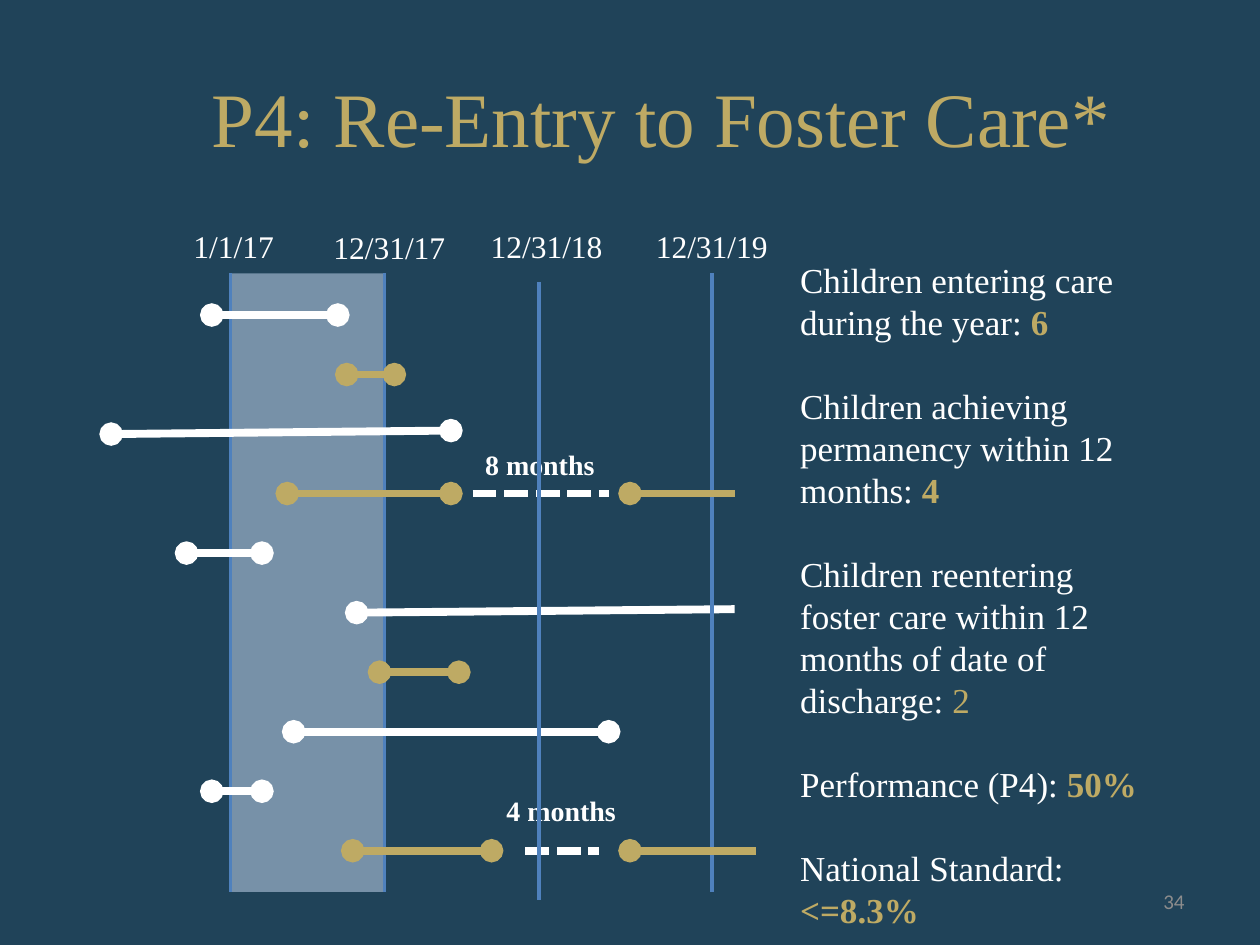
from dataclasses import dataclass

from pptx import Presentation
from pptx.dml.color import RGBColor
from pptx.enum.dml import MSO_LINE
from pptx.enum.shapes import MSO_CONNECTOR, MSO_SHAPE
from pptx.enum.text import MSO_ANCHOR, MSO_AUTO_SIZE, PP_ALIGN
from pptx.oxml.ns import qn
from pptx.util import Cm, Pt
from lxml.etree import SubElement


@dataclass(frozen=True)
class Theme:
    back: str = "204359"
    gold: str = "BEAA64"
    white: str = "FFFFFF"
    band: str = "B9CDE5"
    axis: str = "4F81BD"
    gray: str = "8C8C8C"
    serif: str = "Times New Roman"
    sans: str = "Calibri"
    title: int = 44
    body: int = 20
    date: int = 18
    note: int = 16
    page: int = 12
    thin: float = 2
    thick: float = 4.5


@dataclass(frozen=True)
class Box:
    left: float
    top: float
    width: float
    height: float


THEME = Theme()

ROW_TOP, ROW_GAP = 1.9, 1.2
MARK_TOP, MARK_LEN = 1.06, 12.47
STAYS = [
    (2.07, 4.61, THEME.white, 0, True),
    (4.79, 5.75, THEME.gold, 0, True),
    (0.04, 6.89, THEME.white, 0.07, True),
    (3.59, 6.89, THEME.gold, 0, True),
    (1.56, 3.08, THEME.white, 0, True),
    (4.99, 12.61, THEME.white, 0.07, False),
    (5.45, 7.05, THEME.gold, 0, True),
    (3.72, 10.07, THEME.white, 0, True),
    (2.07, 3.08, THEME.white, 0, True),
    (4.91, 7.71, THEME.gold, 0, True),
]
RETURNS = [
    (3, 10.5, 12.61, 7.33, 10.07, "8 months", 7.33, 1.06),
    (9, 10.5, 13.04, 8.39, 9.87, "4 months", 7.76, 1.27),
]
FACTS = [
    ("Children entering care during the year: ", "6", True),
    ("Children achieving permanency within 12 months: ", "4", True),
    ("Children reentering foster care within 12 months of date of discharge: ", "2", False),
    ("Performance (P4): ", "50%", True),
    ("National Standard: ", "<=8.3%", True),
]


def style(font, size, color, face=THEME.serif, bold=False):
    font.size, font.name, font.bold = Pt(size), face, bold
    font.color.rgb = RGBColor.from_string(color)


def add_text(slide, box, text, size, color, align=PP_ALIGN.LEFT, wrap=True,
             face=THEME.serif, bold=False):
    shape = slide.shapes.add_textbox(Cm(box.left), Cm(box.top), Cm(box.width), Cm(box.height))
    frame = shape.text_frame
    frame.word_wrap = wrap
    frame.text = text
    line = frame.paragraphs[0]
    line.alignment = align
    style(line.font, size, color, face, bold)
    return frame


def add_line(slide, start, end, color, width, head=False, tail=False, dash=None):
    link = slide.shapes.add_connector(
        MSO_CONNECTOR.STRAIGHT, Cm(start[0]), Cm(start[1]), Cm(end[0]), Cm(end[1]))
    link.line.color.rgb = RGBColor.from_string(color)
    link.line.width = Pt(width)
    if dash:
        link.line.dash_style = dash
    props = link.element.spPr
    pen = props.find(qn("a:ln"))
    for tag, shown in (("a:headEnd", head), ("a:tailEnd", tail)):
        if shown:
            SubElement(pen, qn(tag), type="oval")
    SubElement(props, qn("a:effectLst"))


def add_mark(slide, box, date, pos, mid, drop=0, shift=0):
    x, top = box.left + pos, box.top + MARK_TOP + drop
    add_line(slide, (x, top), (x, top + MARK_LEN), THEME.axis, THEME.thin)
    label = Box(box.left + mid - 1.4, box.top + shift, 2.8, 1.02)
    add_text(slide, label, date, THEME.date, THEME.white, PP_ALIGN.CENTER, wrap=False)


def add_band(slide, box, start, end):
    band = slide.shapes.add_shape(
        MSO_SHAPE.RECTANGLE, Cm(box.left + start), Cm(box.top + MARK_TOP),
        Cm(end - start), Cm(MARK_LEN))
    band.shadow.inherit = False
    band.line.fill.background()
    band.fill.solid()
    band.fill.fore_color.rgb = RGBColor.from_string(THEME.band)
    tint = band.element.spPr.find(qn("a:solidFill"))[0]
    SubElement(tint, qn("a:alpha"), val="57000")


def add_chart(slide, box):
    add_band(slide, box, 2.45, 5.55)
    add_mark(slide, box, "1/1/17", 2.45, 2.51)
    add_mark(slide, box, "12/31/17", 5.55, 5.65, shift=0.03)
    rows = [box.top + ROW_TOP + ROW_GAP * i for i in range(len(STAYS))]
    for y, (start, end, color, rise, closed) in zip(rows, STAYS):
        add_line(slide, (box.left + start, y), (box.left + end, y - rise),
                 color, THEME.thick, head=True, tail=closed)
    add_mark(slide, box, "12/31/19", 12.15, 12.15)
    for row, start, end, gap, stop, text, left, lift in RETURNS:
        y = rows[row]
        add_line(slide, (box.left + start, y), (box.left + end, y),
                 THEME.gold, THEME.thick, head=True)
        add_line(slide, (box.left + gap, y), (box.left + stop, y),
                 THEME.white, THEME.thick, dash=MSO_LINE.SQUARE_DOT)
        add_text(slide, Box(box.left + left, y - lift, 2.74, 0.94), text,
                 THEME.note, THEME.white, bold=True)
    add_mark(slide, box, "12/31/18", 8.67, 8.82, drop=0.17)


def add_facts(slide, box):
    frame = add_text(slide, box, "", THEME.body, THEME.white)
    frame.auto_size = MSO_AUTO_SIZE.SHAPE_TO_FIT_TEXT
    for i, (text, value, bold) in enumerate(FACTS):
        line = frame.add_paragraph() if i else frame.paragraphs[0]
        style(line.font, THEME.body, THEME.white)
        line.line_spacing = Pt(24)
        line.space_before = Pt(24 if i else 0)
        line.add_run().text = text
        run = line.add_run()
        run.text = value
        run.font.bold = bold
        run.font.color.rgb = RGBColor.from_string(THEME.gold)


def add_title(slide, box):
    title = slide.shapes.title
    title.left, title.top = Cm(box.left), Cm(box.top)
    title.width, title.height = Cm(box.width), Cm(box.height)
    frame = title.text_frame
    frame.text = "P4: Re-Entry to Foster Care*"
    frame.vertical_anchor = MSO_ANCHOR.MIDDLE
    line = frame.paragraphs[0]
    line.alignment = PP_ALIGN.CENTER
    style(line.font, THEME.title, THEME.gold)
    props = line._p.get_or_add_pPr()
    props.set("marL", str(Cm(1.27)))
    props.set("indent", "0")


def add_page(slide, box):
    frame = add_text(slide, box, "34", THEME.page, THEME.gray, PP_ALIGN.RIGHT, face=THEME.sans)
    frame.vertical_anchor = MSO_ANCHOR.MIDDLE


def main():
    deck = Presentation()
    deck.slide_width, deck.slide_height = Cm(25.4), Cm(19.05)
    slide = deck.slides.add_slide(deck.slide_layouts[5])
    slide.background.fill.solid()
    slide.background.fill.fore_color.rgb = RGBColor.from_string(THEME.back)
    add_title(slide, Box(0, 0.76, 25.4, 3.18))
    add_chart(slide, Box(2.2, 4.45, 13.1, 13.7))
    add_facts(slide, Box(15.88, 5.08, 7.37, 13.94))
    add_page(slide, Box(18.2, 17.65, 5.93, 1.02))
    deck.save("out.pptx")


if __name__ == "__main__":
    main()
